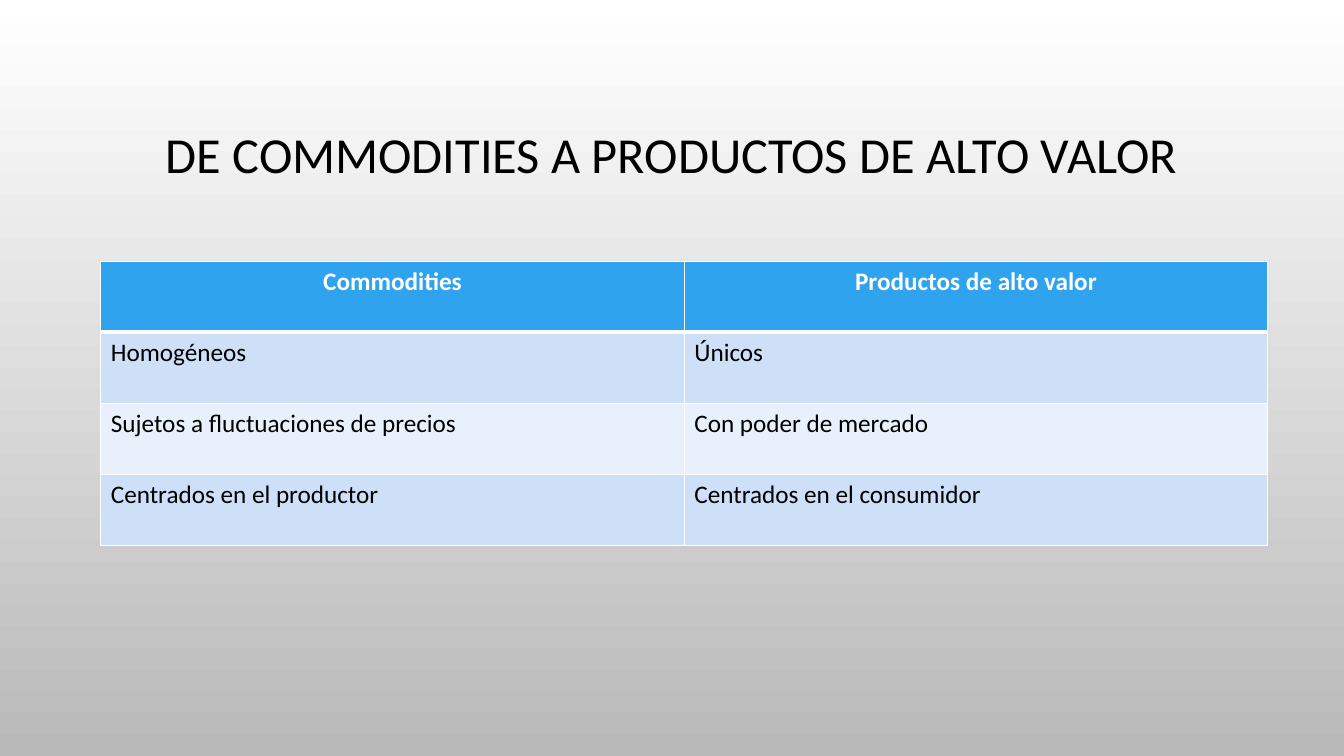
import pptx
import pptx.util
import pptx.dml.color
import pptx.enum.text
import pptx.oxml
import pptx.oxml.ns
from pptx.util import Cm

COLORS = {"top": "FFFFFF", "bottom": "B9B9B9", "text": "000000", "white": "FFFFFF",
          "header": "2FA3EE", "odd": "CDE0F8", "even": "E8F0FC"}
ALIGN = pptx.enum.text.PP_ALIGN
TITLE = "DE COMMODITIES A PRODUCTOS DE ALTO VALOR"
ROWS = [
    ("Commodities", "Productos de alto valor"),
    ("Homogéneos", "Únicos"),
    ("Sujetos a fluctuaciones de precios", "Con poder de mercado"),
    ("Centrados en el productor", "Centrados en el consumidor"),
]


def rgb(name):
    return pptx.dml.color.RGBColor.from_string(COLORS[name])


def write(tf, text, color, align, **formats):
    """Write one formatted paragraph and return it."""
    p = tf.paragraphs[0]
    p.alignment = align
    r = p.add_run()
    r.text = text
    r.font.color.rgb = rgb(color)
    for name, value in {"name": "Calibri", **formats}.items():
        setattr(r.font, name, value)
    return p


def add_background(s):
    fill = s.background.fill
    fill.gradient()
    fill.gradient_angle = 270
    for stop, name, position in zip(fill.gradient_stops, ("top", "bottom"), (0, 1)):
        stop.color.rgb = rgb(name)
        stop.position = position


def add_title(s, left, top, width, height):
    tf = s.shapes.add_textbox(left, top, width, height).text_frame
    tf.word_wrap = True
    tf.vertical_anchor = pptx.enum.text.MSO_ANCHOR.MIDDLE
    p = write(tf, TITLE, "text", ALIGN.CENTER, size=pptx.util.Pt(36))
    p.line_spacing = 0.9


def set_borders(cell, widths):
    tcPr = cell._tc.get_or_add_tcPr()
    for side, width in widths.items():
        tcPr.append(pptx.oxml.parse_xml(
            f'<a:ln{side} {pptx.oxml.ns.nsdecls("a")} w="{pptx.util.Pt(width)}">'
            f'<a:solidFill><a:srgbClr val="{COLORS["white"]}"/></a:solidFill></a:ln{side}>'))


def add_comparison(s, left, top, width, height):
    table = s.shapes.add_table(len(ROWS), len(ROWS[0]), left, top, width, height).table
    for i, row in enumerate(ROWS):
        header = i == 0
        band = "header" if header else ("even", "odd")[i % 2]
        # A thick rule separates the header from the body
        widths = {"L": 1, "R": 1, "T": 3 if i == 1 else 1, "B": 3 if header else 1}
        for j, text in enumerate(row):
            cell = table.cell(i, j)
            set_borders(cell, widths)
            cell.fill.solid()
            cell.fill.fore_color.rgb = rgb(band)
            write(cell.text_frame, text, "white" if header else "text",
                  ALIGN.CENTER if header else ALIGN.LEFT,
                  size=pptx.util.Pt(18), bold=header)


def main():
    prs = pptx.Presentation()
    prs.slide_width, prs.slide_height = Cm(33.87), Cm(19.05)
    s = prs.slides.add_slide(prs.slide_layouts[6])
    add_background(s)
    add_title(s, Cm(2.54), Cm(1.73), Cm(28.78), Cm(4.45))
    add_comparison(s, Cm(2.54), Cm(6.58), Cm(29.41), Cm(7.16))
    prs.save("out.pptx")


if __name__ == "__main__":
    main()
